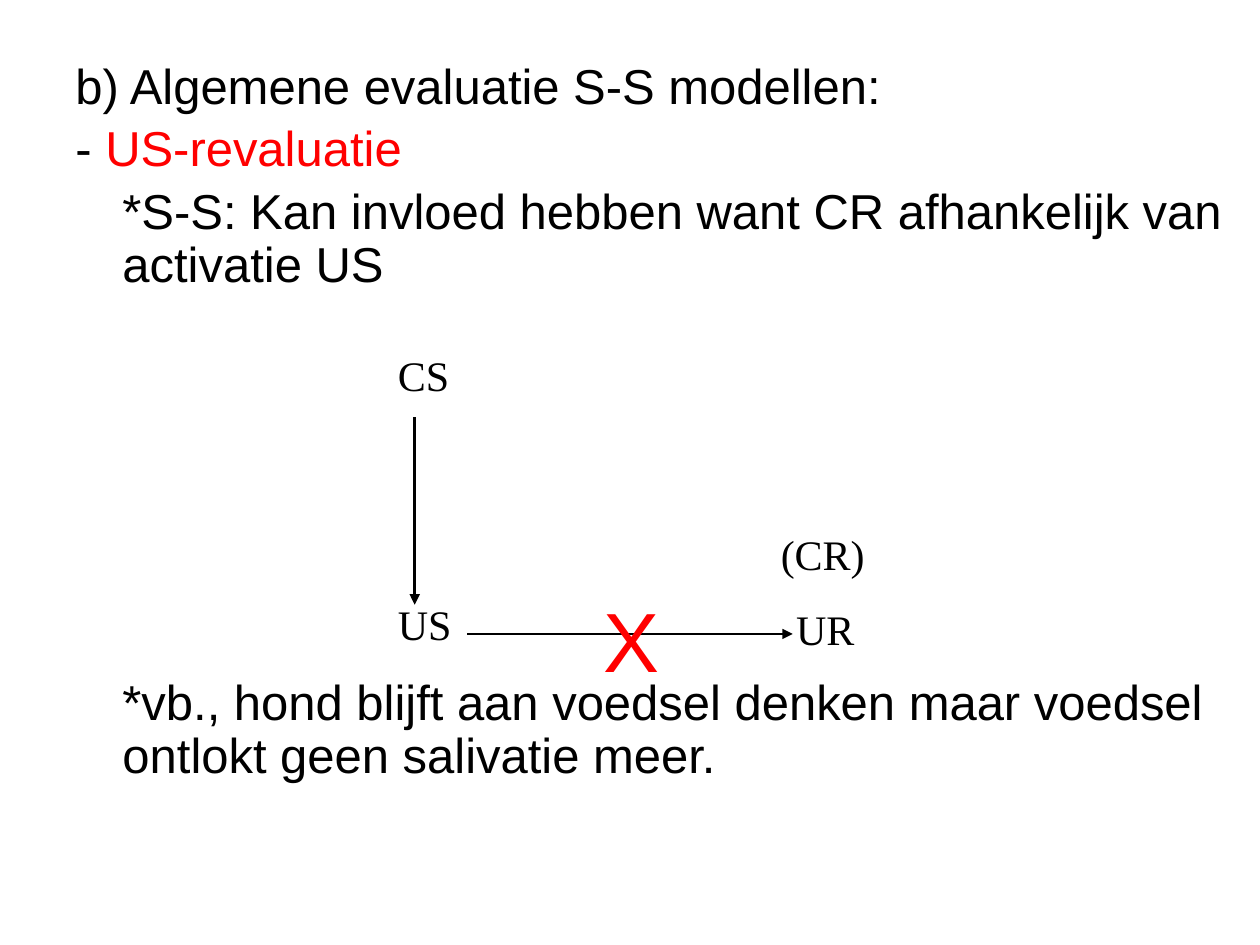
import pptx
import pptx.enum.shapes
import pptx.dml.color
import pptx.oxml
import pptx.oxml.ns
import pptx.util
from pptx.util import Cm

COLORS = {"text": "000000", "accent": "FF0000"}


def rgb(name):
    """Return the named colour."""
    return pptx.dml.color.RGBColor.from_string(COLORS[name])


def add_run(p, text, size=28, font="Arial", color="text"):
    """Add formatted text to a paragraph."""
    r = p.add_run()
    r.text = text
    r.font.size = pptx.util.Pt(size)
    r.font.name = font
    r.font.color.rgb = rgb(color)


def add_box(s, x, y, w, h):
    """Add a wrapping text box and return its text frame."""
    tf = s.shapes.add_textbox(Cm(x), Cm(y), Cm(w), Cm(h)).text_frame
    tf.word_wrap = True
    return tf


def add_arrow(s, x1, y1, x2, y2, width):
    """Add a straight line with a triangular head at its end."""
    c = s.shapes.add_connector(
        pptx.enum.shapes.MSO_CONNECTOR.STRAIGHT, Cm(x1), Cm(y1), Cm(x2), Cm(y2))
    c.line.color.rgb = rgb("text")
    c.line.width = pptx.util.Pt(width)
    ln = c.line._get_or_add_ln()
    ln.append(pptx.oxml.parse_xml(
        f'<a:tailEnd {pptx.oxml.ns.nsdecls("a")} type="triangle"/>'))
    c._element.spPr.append(pptx.oxml.parse_xml(
        f'<a:effectLst {pptx.oxml.ns.nsdecls("a")}/>'))


def add_body(s, x, y, w, h):
    """Write the argument, leaving room for the diagram before the example."""
    paragraphs = [
        (0, 0, [("b) Algemene evaluatie S-S modellen:", "text")]),
        (0, 5.6, [("- ", "text"), ("US-revaluatie", "accent")]),
        (0.95, 5.6, [("*S-S: Kan invloed hebben want CR afhankelijk van "
                      "activatie US", "text")]),
        (0.95, 220, [("*vb., hond blijft aan voedsel denken maar voedsel "
                      "ontlokt geen salivatie meer.", "text")]),
    ]
    tf = add_box(s, x, y, w, h)
    for i, (margin, before, runs) in enumerate(paragraphs):
        p = tf.add_paragraph() if i else tf.paragraphs[0]
        p.line_spacing = 0.9
        p.space_before = pptx.util.Pt(before)
        p._p.get_or_add_pPr().set("marL", str(Cm(margin)))
        for text, color in runs:
            add_run(p, text, color=color)


def add_diagram(s, x, y):
    """Draw the CS-US-UR chain with its blocked link."""
    labels = [("CS", 0, 0), ("US", 0, 5.01), ("UR", 8.03, 5.11), ("(CR)", 7.72, 3.59)]
    for text, dx, dy in labels:
        tf = add_box(s, x + dx, y + dy, 2.9, 1.3)
        add_run(tf.paragraphs[0], text, size=24, font="Times New Roman")
    add_arrow(s, x + 0.59, y + 1.48, x + 0.59, y + 5.26, 2)
    add_arrow(s, x + 1.65, y + 5.85, x + 8.21, y + 5.85, 0.75)
    tf = add_box(s, x + 4.14, y + 4.8, 1.65, 2.29)
    add_run(tf.paragraphs[0], "X", size=48, color="accent")


def main():
    """Build and save the slide."""
    prs = pptx.Presentation()
    prs.slide_width, prs.slide_height = Cm(25.4), Cm(19.05)
    s = prs.slides.add_slide(prs.slide_layouts[6])
    add_body(s, 1.27, 1.12, 23.62, 15.9)
    add_diagram(s, 7.77, 6.93)
    prs.save("out.pptx")


if __name__ == "__main__":
    main()
